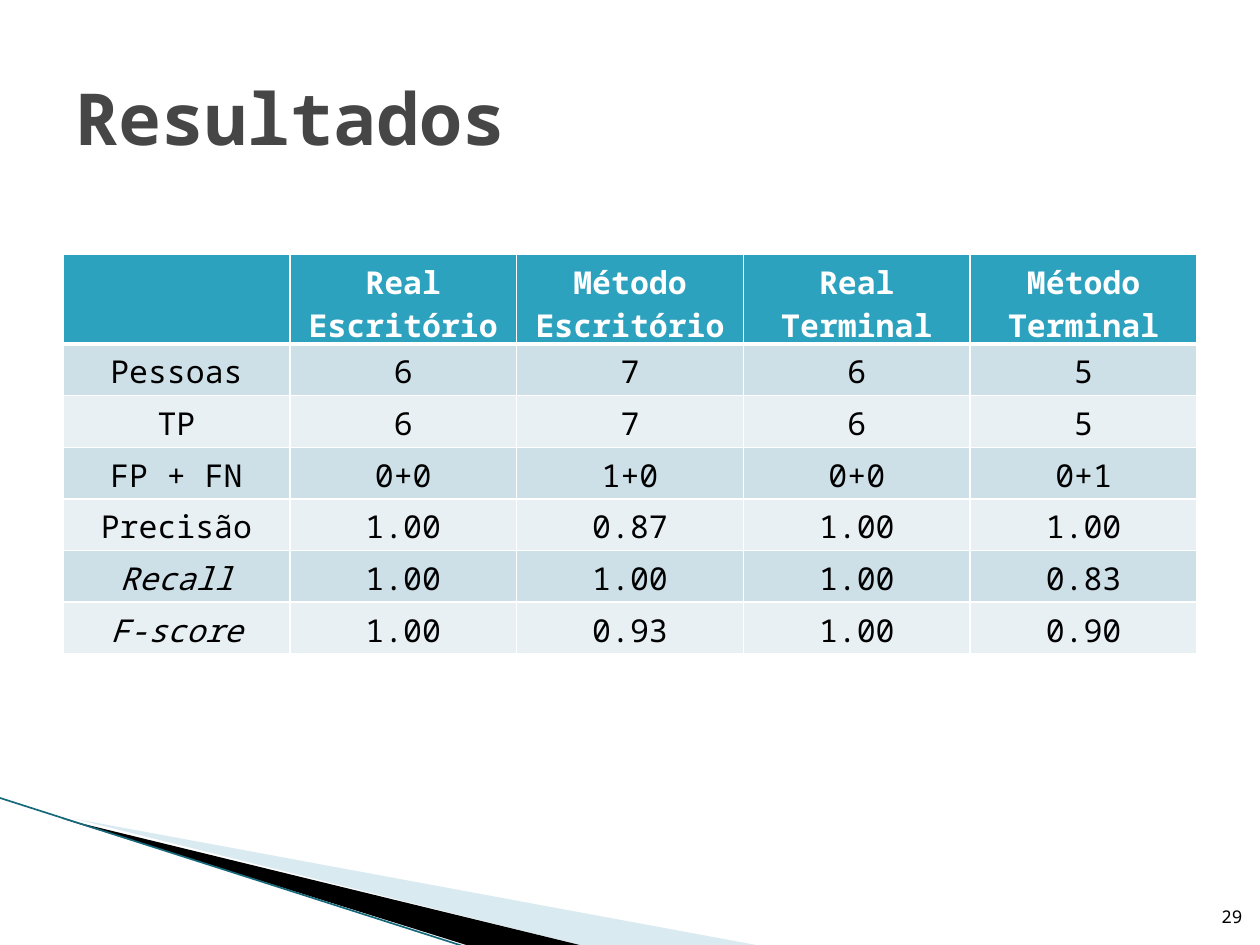
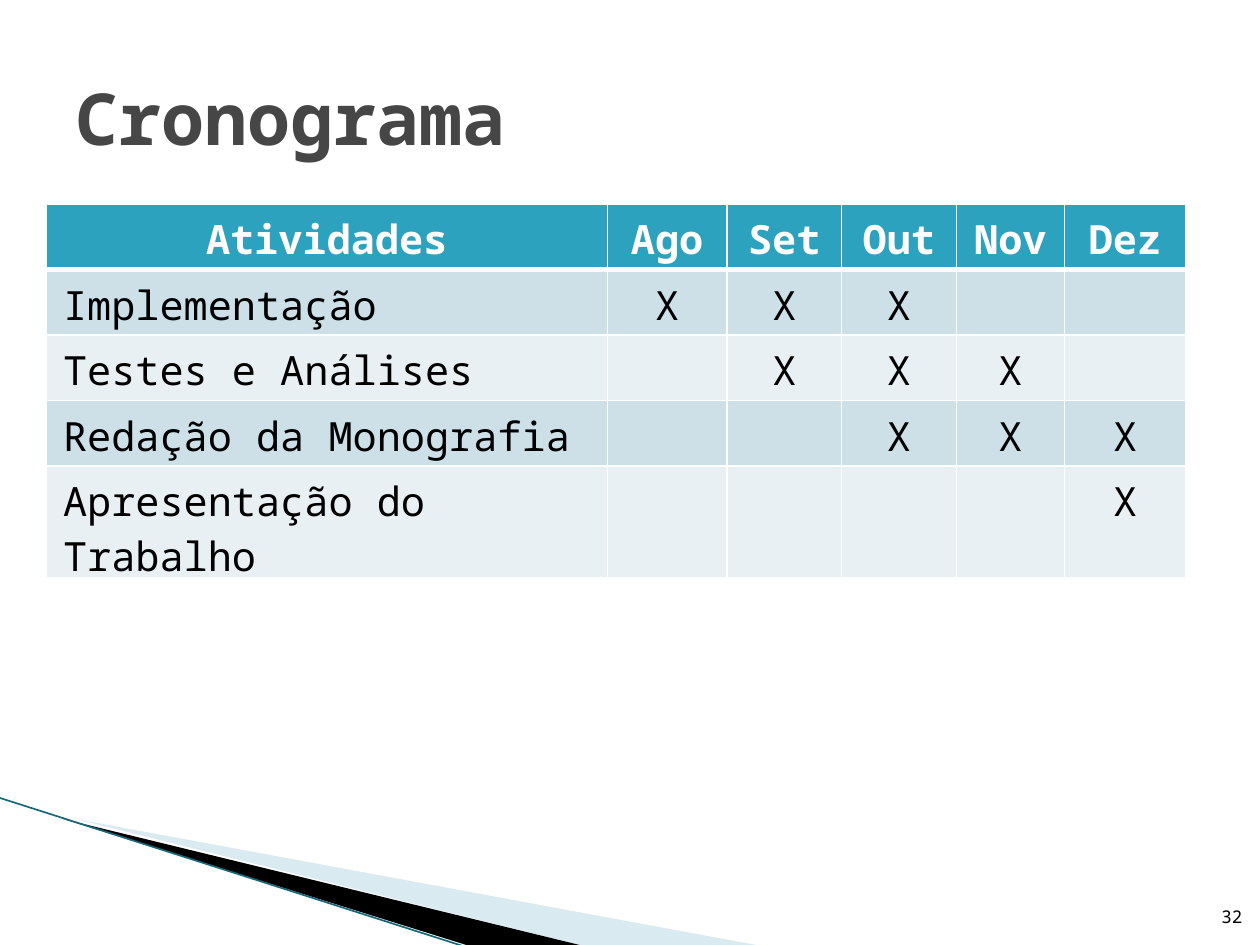
from dataclasses import dataclass
from typing import NamedTuple

from lxml import etree
from pptx import Presentation
from pptx.dml.color import RGBColor
from pptx.enum.shapes import MSO_CONNECTOR
from pptx.enum.text import MSO_ANCHOR, PP_ALIGN
from pptx.oxml.ns import qn
from pptx.util import Emu, Inches, Pt

LEFT, CENTER, RIGHT = PP_ALIGN.LEFT, PP_ALIGN.CENTER, PP_ALIGN.RIGHT
MIDDLE, BOTTOM = MSO_ANCHOR.MIDDLE, MSO_ANCHOR.BOTTOM
STRAIGHT = MSO_CONNECTOR.STRAIGHT
TITLE_ONLY = 5

# The slide is a grid of 100 columns by 75 rows of square cells.
WIDTH, HEIGHT = Inches(10), Inches(7.5)
CELL = WIDTH // 100


@dataclass(frozen=True)
class Theme:
    font: str = "Noto Sans Mono"
    title: str = "464646"
    text: str = "000000"
    white: str = "FFFFFF"
    header: str = "2DA2BF"
    bands: tuple[str, str] = ("CDE0E8", "E8F0F4")
    pale_wedge: str = "A0CBDC"
    dark_wedge: str = "000000"
    wedge_edge: str = "16697A"
    title_size: int = 41
    number_size: int = 10
    edge_width: float = 0.95
    rule: int = 1
    header_rule: int = 3


class Box(NamedTuple):
    x: float
    y: float
    w: float
    h: float


class Wedge(NamedTuple):
    points: list[tuple[float, float]]
    color: str
    opacity: int = 100


@dataclass
class TableSpec:
    x: float
    y: float
    columns: list[float]
    rows: list[float]
    size: int
    cells: list[list[str]]
    margins: tuple[float, float]
    label_align: PP_ALIGN = CENTER
    italic: tuple[str, ...] = ()


THEME = Theme()
TITLE_BOX = Box(5, 3, 90, 12.5)
NUMBER_BOX = Box(94.6, 70.1, 4, 4)
WEDGES = [
    Wedge([(5.5, 65.1), (59.5, 75.1), (45.6, 75.1), (5.5, 65)], THEME.pale_wedge, 40),
    Wedge([(5.3, 64.9), (45.7, 75.1), (37.2, 75.2), (5.4, 65)], THEME.dark_wedge),
]
EDGE = ((-0.1, 63.3), (37.1, 75.2))

RESULTS = TableSpec(
    x=5, y=20.2, columns=[18] * 5, rows=[7.1] + [4.1] * 6, size=18,
    margins=(1, 0.5), italic=("Recall", "F-score"),
    cells=[
        ["", "Real Escritório", "Método Escritório", "Real Terminal", "Método Terminal"],
        ["Pessoas", "6", "7", "6", "5"],
        ["TP", "6", "7", "6", "5"],
        ["FP + FN", "0+0", "1+0", "0+0", "0+1"],
        ["Precisão", "1.00", "0.87", "1.00", "1.00"],
        ["Recall", "1.00", "1.00", "1.00", "0.83"],
        ["F-score", "1.00", "0.93", "1.00", "0.90"],
    ],
)
SCHEDULE = TableSpec(
    x=3.7, y=16.2, columns=[44.5, 9.5, 9.1, 9.1, 8.6, 9.6], rows=[5.2] * 5, size=23,
    margins=(1.3, 0.6), label_align=LEFT,
    cells=[
        ["Atividades", "Ago", "Set", "Out", "Nov", "Dez"],
        ["Implementação", "X", "X", "X", "", ""],
        ["Testes e Análises", "", "X", "X", "Χ", ""],
        ["Redação da Monografia", "", "", "X", "Χ", "Χ"],
        ["Apresentação do Trabalho", "", "", "", "", "Χ"],
    ],
)


def cells(n: float) -> Emu:
    """Turn grid cells into a length."""
    return Emu(round(n * CELL))


def write(tf, text: str, *, size: float, color: str = THEME.text,
          bold: bool = False, italic: bool = False, align: PP_ALIGN = LEFT) -> None:
    p = tf.paragraphs[0]
    p.alignment = align
    r = p.add_run()
    r.text = text
    r.font.name = THEME.font
    r.font.size = Pt(size)
    r.font.bold = bold
    r.font.italic = italic
    r.font.color.rgb = RGBColor.from_string(color)


def draw_wedge(slide, wedge: Wedge) -> None:
    start, *others = wedge.points
    builder = slide.shapes.build_freeform(*start, scale=CELL)
    builder.add_line_segments(others, close=True)
    sp = builder.convert_to_shape()
    sp.shadow.inherit = False
    sp.line.fill.background()
    sp.fill.solid()
    sp.fill.fore_color.rgb = RGBColor.from_string(wedge.color)
    if wedge.opacity < 100:
        color = next(sp.element.spPr.iter(qn("a:srgbClr")))
        etree.SubElement(color, qn("a:alpha"), val=str(wedge.opacity * 1000))


def draw_corner(slide) -> None:
    """Draw the wedges and their edge in the bottom left corner."""
    for wedge in WEDGES:
        draw_wedge(slide, wedge)
    ends = [cells(n) for point in EDGE for n in point]
    line = slide.shapes.add_connector(STRAIGHT, *ends)
    line.line.color.rgb = RGBColor.from_string(THEME.wedge_edge)
    line.line.width = Pt(THEME.edge_width)
    etree.SubElement(line.element.spPr, qn("a:effectLst"))


def set_borders(cell, top: float, bottom: float) -> None:
    tc_pr = cell._tc.get_or_add_tcPr()
    widths = {"lnL": THEME.rule, "lnR": THEME.rule, "lnT": top, "lnB": bottom}
    for side, width in widths.items():
        ln = etree.SubElement(tc_pr, qn(f"a:{side}"), w=str(Pt(width)))
        fill = etree.SubElement(ln, qn("a:solidFill"))
        etree.SubElement(fill, qn("a:srgbClr"), val=THEME.white)


def draw_table(slide, spec: TableSpec) -> None:
    frame = slide.shapes.add_table(
        len(spec.rows), len(spec.columns), cells(spec.x), cells(spec.y),
        cells(sum(spec.columns)), cells(sum(spec.rows)))
    table = frame.table
    for column, width in zip(table.columns, spec.columns):
        column.width = cells(width)
    for row, height in zip(table.rows, spec.rows):
        row.height = cells(height)

    side, end = (cells(n) for n in spec.margins)
    for i, texts in enumerate(spec.cells):
        header = i == 0
        fill = THEME.header if header else THEME.bands[(i - 1) % 2]
        top = THEME.header_rule if i == 1 else THEME.rule
        bottom = THEME.header_rule if header else THEME.rule
        for j, text in enumerate(texts):
            cell = table.cell(i, j)
            set_borders(cell, top, bottom)
            cell.fill.solid()
            cell.fill.fore_color.rgb = RGBColor.from_string(fill)
            cell.margin_left = cell.margin_right = side
            cell.margin_top = cell.margin_bottom = end
            if text:
                write(cell.text_frame, text, size=spec.size, bold=header,
                      color=THEME.white if header else THEME.text,
                      italic=text in spec.italic,
                      align=spec.label_align if j == 0 and not header else CENTER)


def add_slide(prs, title: str, number: int, table: TableSpec) -> None:
    slide = prs.slides.add_slide(prs.slide_layouts[TITLE_ONLY])
    draw_corner(slide)

    heading = slide.shapes.title
    heading.left, heading.top, heading.width, heading.height = map(cells, TITLE_BOX)
    heading.text_frame.vertical_anchor = MIDDLE
    write(heading.text_frame, title, size=THEME.title_size, color=THEME.title, bold=True)

    tf = slide.shapes.add_textbox(*map(cells, NUMBER_BOX)).text_frame
    tf.word_wrap = True
    tf.vertical_anchor = BOTTOM
    tf.margin_left = tf.margin_right = 0
    write(tf, str(number), size=THEME.number_size, align=RIGHT)

    draw_table(slide, table)


def main() -> None:
    prs = Presentation()
    prs.slide_width, prs.slide_height = WIDTH, HEIGHT
    add_slide(prs, "Resultados", 29, RESULTS)
    add_slide(prs, "Cronograma", 32, SCHEDULE)
    prs.save("out.pptx")


if __name__ == "__main__":
    main()
